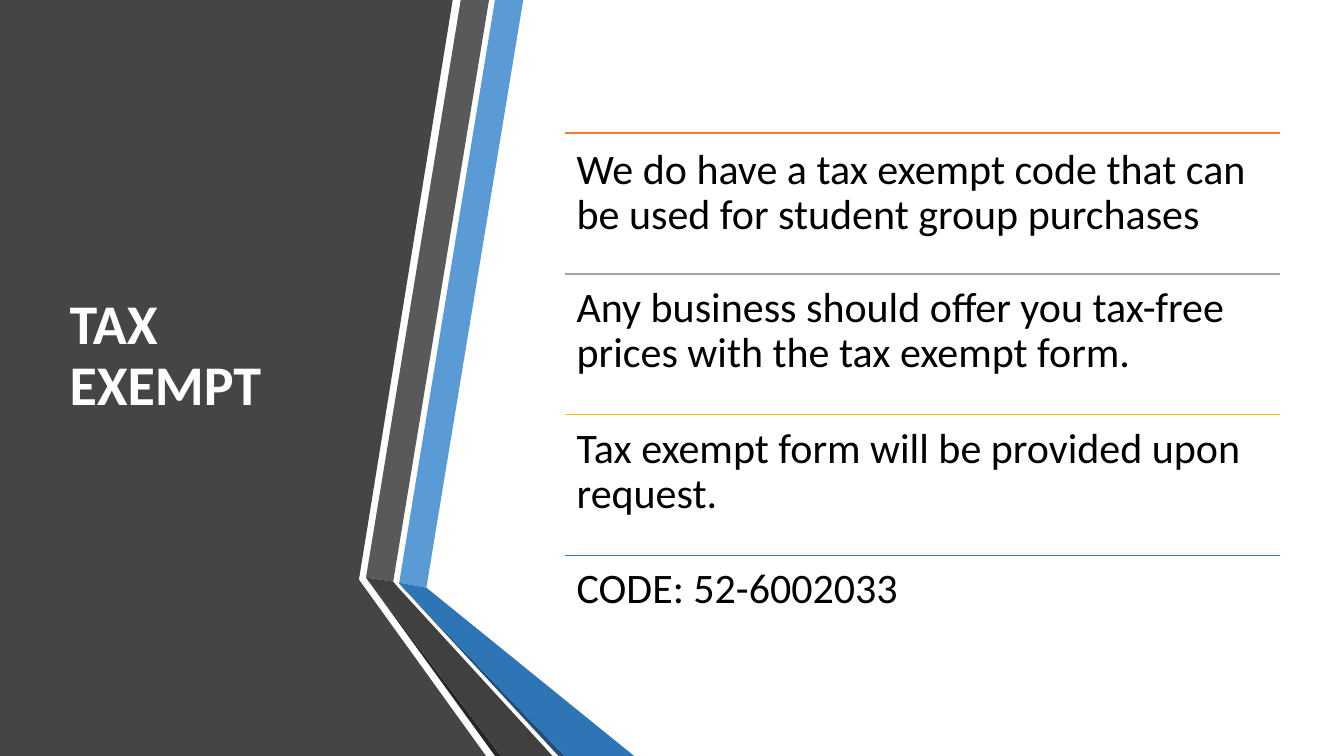
from dataclasses import dataclass

from lxml import etree
from pptx import Presentation
from pptx.dml.color import RGBColor
from pptx.enum.shapes import MSO_CONNECTOR
from pptx.enum.text import MSO_ANCHOR, MSO_AUTO_SIZE, PP_ALIGN
from pptx.oxml.ns import qn
from pptx.slide import Slide
from pptx.text.text import TextFrame
from pptx.util import Inches, Pt

STRAIGHT = MSO_CONNECTOR.STRAIGHT
TOP, MIDDLE = MSO_ANCHOR.TOP, MSO_ANCHOR.MIDDLE
NO_FIT = MSO_AUTO_SIZE.NONE
LEFT_ALIGN = PP_ALIGN.LEFT

SLIDE_WIDTH, SLIDE_HEIGHT = 13.33, 7.5
LIST_LEFT, LIST_TOP, LIST_WIDTH = 5.6, 1.32, 7.1
ROW_HEIGHT, ROW_PITCH = 1.4, 1.397
FIRST_TEXT_OFFSET = 0.03

TITLE_FORMAT = {"name": "Calibri", "size": Pt(40), "bold": True}
ITEM_FORMAT = {"name": "Calibri", "size": Pt(30), "bold": False}


@dataclass(frozen=True)
class Band:
    color: str
    points: tuple[tuple[float, float], ...]


@dataclass(frozen=True)
class Item:
    text: str
    rule_color: str


BANDS = (
    Band("454545", ((0, 0), (4.49, 0), (3.56, 5.75), (4.82, 7.5), (0, 7.5))),
    Band("5B9BD5", ((3.96, 5.78), (4.23, 5.83), (5.19, 0), (4.91, 0))),
    Band("595959", ((4.85, 0), (4.57, 0), (3.63, 5.73), (3.9, 5.77))),
    Band("262626", ((3.63, 5.73), (4.91, 7.5), (4.97, 7.5))),
    Band("1F4E79", ((3.96, 5.79), (5.54, 7.5), (5.6, 7.5))),
    Band("2E75B6", ((3.96, 5.78), (3.96, 5.79), (5.6, 7.5), (6.29, 7.5), (4.23, 5.83))),
    Band("404040", ((3.63, 5.73), (4.97, 7.5), (5.48, 7.5), (3.95, 5.83), (3.9, 5.77))),
)

ITEMS = (
    Item("We do have a tax exempt code that can be used for student group purchases", "ED7D31"),
    Item("Any business should offer you tax-free prices with the tax exempt form.", "A5A5A5"),
    Item("Tax exempt form will be provided upon request.", "FFC000"),
    Item("CODE: 52-6002033", "4472C4"),
)


def rgb(color: str) -> RGBColor:
    return RGBColor.from_string(color)


def draw_band(slide: Slide, band: Band) -> None:
    start, *others = [(Inches(x), Inches(y)) for x, y in band.points]
    builder = slide.shapes.build_freeform(*start)
    builder.add_line_segments(others, close=True)
    shape = builder.convert_to_shape()
    shape.shadow.inherit = False
    shape.fill.solid()
    shape.fill.fore_color.rgb = rgb(band.color)
    shape.line.fill.background()


def write_text(frame: TextFrame, text: str, font_format: dict, color: str,
               anchor: MSO_ANCHOR, margins: tuple[float, float]) -> None:
    horizontal, vertical = map(Inches, margins)
    frame_format = {
        "word_wrap": True, "auto_size": NO_FIT, "vertical_anchor": anchor,
        "margin_left": horizontal, "margin_right": horizontal,
        "margin_top": vertical, "margin_bottom": vertical,
    }
    for name, value in frame_format.items():
        setattr(frame, name, value)
    frame.text = text
    paragraph = frame.paragraphs[0]
    paragraph.alignment = LEFT_ALIGN
    paragraph.line_spacing = 0.9
    font = paragraph.runs[0].font
    for name, value in font_format.items():
        setattr(font, name, value)
    font.color.rgb = rgb(color)


def draw_title(slide: Slide) -> None:
    title = slide.shapes.title
    title.left, title.top = Inches(0.59), Inches(0.75)
    title.width, title.height = Inches(3.04), Inches(5.58)
    write_text(title.text_frame, "TAX EXEMPT", TITLE_FORMAT, "FFFFFF", MIDDLE, (0.1, 0.05))
    slide.shapes._spTree.append(title._element)


def draw_item(slide: Slide, item: Item, index: int) -> None:
    top = LIST_TOP + index * ROW_PITCH
    rule = slide.shapes.add_connector(
        STRAIGHT, Inches(LIST_LEFT), Inches(top), Inches(LIST_LEFT + LIST_WIDTH), Inches(top))
    rule.line.color.rgb = rgb(item.rule_color)
    rule.line.width = Pt(1)
    etree.SubElement(rule._element.spPr, qn("a:effectLst"))
    text_top = top + FIRST_TEXT_OFFSET if index == 0 else top
    box = slide.shapes.add_textbox(
        Inches(LIST_LEFT), Inches(text_top), Inches(LIST_WIDTH), Inches(ROW_HEIGHT))
    write_text(box.text_frame, item.text, ITEM_FORMAT, "000000", TOP, (0.12, 0.12))


def main() -> None:
    presentation = Presentation()
    presentation.slide_width = Inches(SLIDE_WIDTH)
    presentation.slide_height = Inches(SLIDE_HEIGHT)
    slide = presentation.slides.add_slide(presentation.slide_layouts.get_by_name("Title Only"))
    for band in BANDS:
        draw_band(slide, band)
    draw_title(slide)
    for index, item in enumerate(ITEMS):
        draw_item(slide, item, index)
    presentation.save("out.pptx")


if __name__ == "__main__":
    main()
